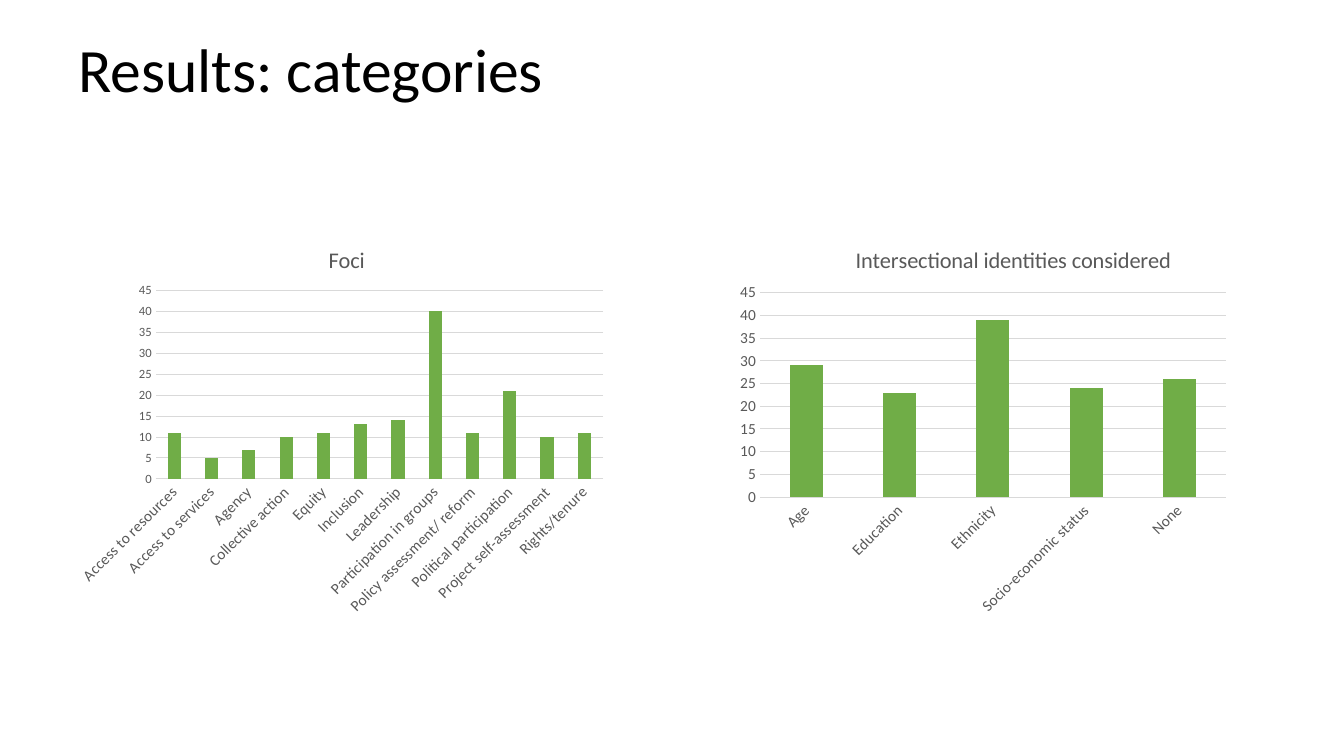
import pptx
import pptx.util
import pptx.chart.data
import pptx.dml.color
import pptx.enum.chart
import pptx.enum.text
import pptx.oxml.ns
import lxml.etree
from dataclasses import dataclass

EMU_PER_PX = 914400 / 100.8


@dataclass(frozen=True)
class Theme:
    font: str = "Calibri"
    ink: str = "000000"
    muted: str = "595959"
    rule: str = "D9D9D9"
    bar: str = "70AD47"
    heading_size: int = 44
    chart_title_size: int = 16
    label_size: int = 11
    small_label_size: int = 9


THEME = Theme()

FOCI = {
    "Access to resources": 11,
    "Access to services": 5,
    "Agency": 7,
    "Collective action": 10,
    "Equity": 11,
    "Inclusion": 13,
    "Leadership": 14,
    "Participation in groups": 40,
    "Policy assessment/ reform": 11,
    "Political participation": 21,
    "Project self-assessment": 10,
    "Rights/tenure": 11,
}
IDENTITIES = {
    "Age": 29,
    "Education": 23,
    "Ethnicity": 39,
    "Socio-economic status": 24,
    "None": 26,
}


def px(length):
    return pptx.util.Emu(round(length * EMU_PER_PX))


def color(value):
    return pptx.dml.color.RGBColor.from_string(value)


def set_all(target, values):
    for name, value in values.items():
        setattr(target, name, value)


def set_font(font, size, ink):
    set_all(font, {"name": THEME.font, "size": pptx.util.Pt(size), "bold": False})
    font.color.rgb = color(ink)


def set_line(line):
    line.color.rgb = color(THEME.rule)
    line.width = pptx.util.Pt(0.75)


def add_heading(page, box, text):
    title = page.shapes.title
    set_all(title, dict(zip(("left", "top", "width", "height"), map(px, box))))
    frame = title.text_frame
    set_all(frame, {"text": text, "word_wrap": True,
                    "vertical_anchor": pptx.enum.text.MSO_ANCHOR.MIDDLE})
    para = frame.paragraphs[0]
    set_all(para, {"alignment": pptx.enum.text.PP_ALIGN.LEFT, "line_spacing": 0.9})
    set_font(para.runs[0].font, THEME.heading_size, THEME.ink)


def place_chart_title(chart, x, y):
    """Set the title's top left corner as fractions of the chart."""
    qn = pptx.oxml.ns.qn
    title = chart.chart_title._element
    for layout in title.findall(qn("c:layout")):
        title.remove(layout)
    layout = lxml.etree.Element(qn("c:layout"))
    title.find(qn("c:tx")).addnext(layout)
    manual = lxml.etree.SubElement(layout, qn("c:manualLayout"))
    for name, value in {"xMode": "edge", "yMode": "edge", "x": x, "y": y}.items():
        lxml.etree.SubElement(manual, qn("c:" + name)).set("val", str(value))


def add_bar_chart(page, box, title, values, value_size, title_at):
    data = pptx.chart.data.CategoryChartData()
    data.categories = list(values)
    data.add_series("Series 1", list(values.values()))
    chart = page.shapes.add_chart(
        pptx.enum.chart.XL_CHART_TYPE.COLUMN_CLUSTERED, *map(px, box), data).chart
    set_font(chart.font, THEME.label_size, THEME.muted)
    set_all(chart, {"has_legend": False, "has_title": True})

    # Chart title
    frame = chart.chart_title.text_frame
    frame.text = title
    set_font(frame.paragraphs[0].runs[0].font, THEME.chart_title_size, THEME.muted)
    place_chart_title(chart, *title_at)

    # Bars
    plot = chart.plots[0]
    set_all(plot, {"gap_width": 182, "vary_by_categories": False})
    fill = plot.series[0].format.fill
    fill.solid()
    fill.fore_color.rgb = color(THEME.bar)

    # Axes
    no_tick = pptx.enum.chart.XL_TICK_MARK.NONE
    sizes = ((chart.category_axis, THEME.label_size), (chart.value_axis, value_size))
    for axis, size in sizes:
        set_all(axis, {"major_tick_mark": no_tick, "minor_tick_mark": no_tick})
        set_font(axis.tick_labels.font, size, THEME.muted)
    set_line(chart.category_axis.format.line)
    chart.category_axis._element.txPr.bodyPr.set("rot", str(-45 * 60000))
    set_all(chart.value_axis, {"minimum_scale": 0, "maximum_scale": 45,
                               "major_unit": 5, "has_major_gridlines": True})
    chart.value_axis.format.line.fill.background()
    set_line(chart.value_axis.major_gridlines.format.line)


def main():
    deck = pptx.Presentation()
    set_all(deck, {"slide_width": px(1344), "slide_height": px(756)})
    page = deck.slides.add_slide(deck.slide_layouts.get_by_name("Title Only"))

    add_heading(page, (68, 0, 1159, 146), "Results: categories")
    add_bar_chart(page, (68, 221, 546, 403), "Foci", FOCI,
                  THEME.small_label_size, (0.47, 0.05))
    add_bar_chart(page, (730, 221, 506, 403), "Intersectional identities considered",
                  IDENTITIES, THEME.label_size, (0.24, 0.05))
    deck.save("out.pptx")


if __name__ == "__main__":
    main()
